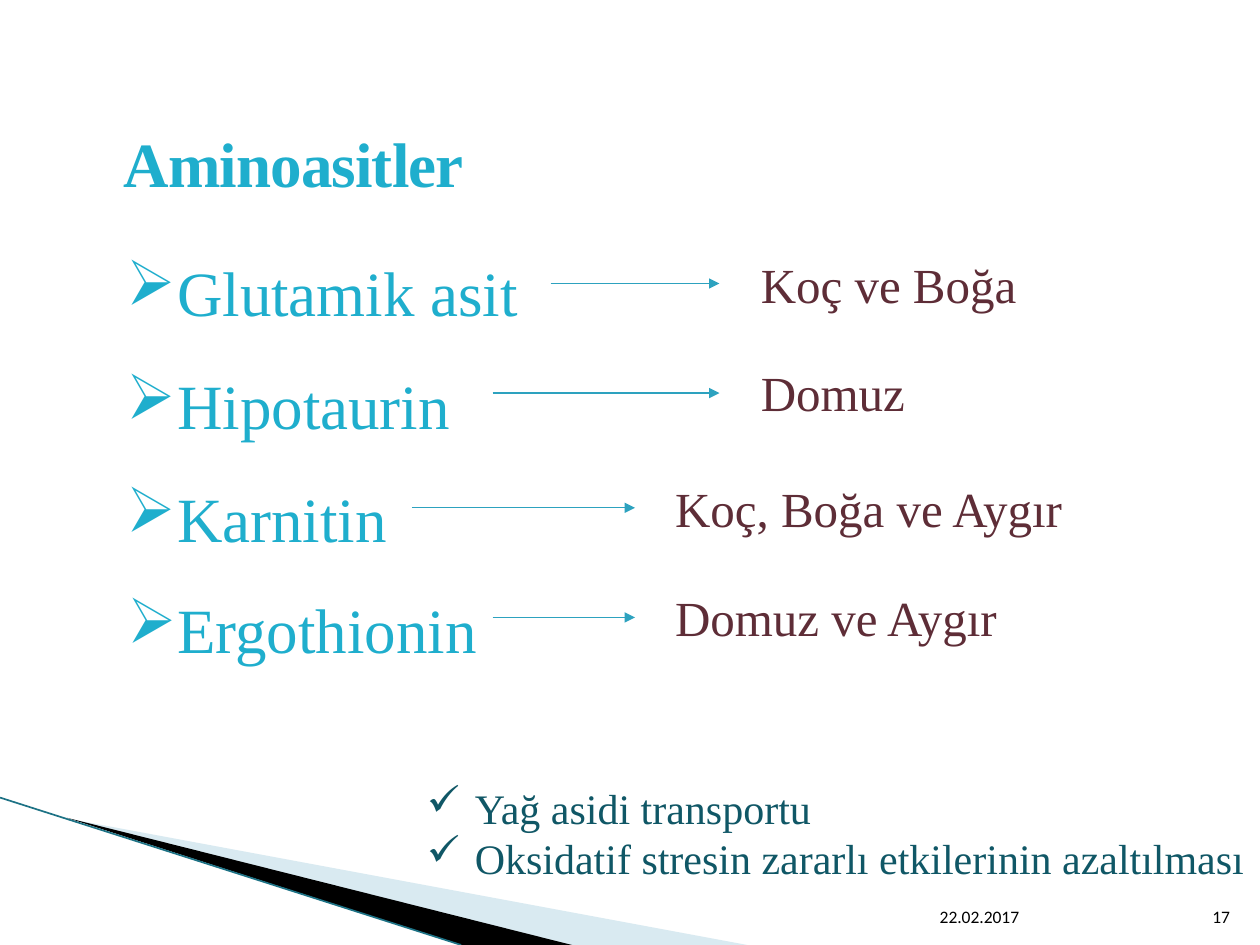
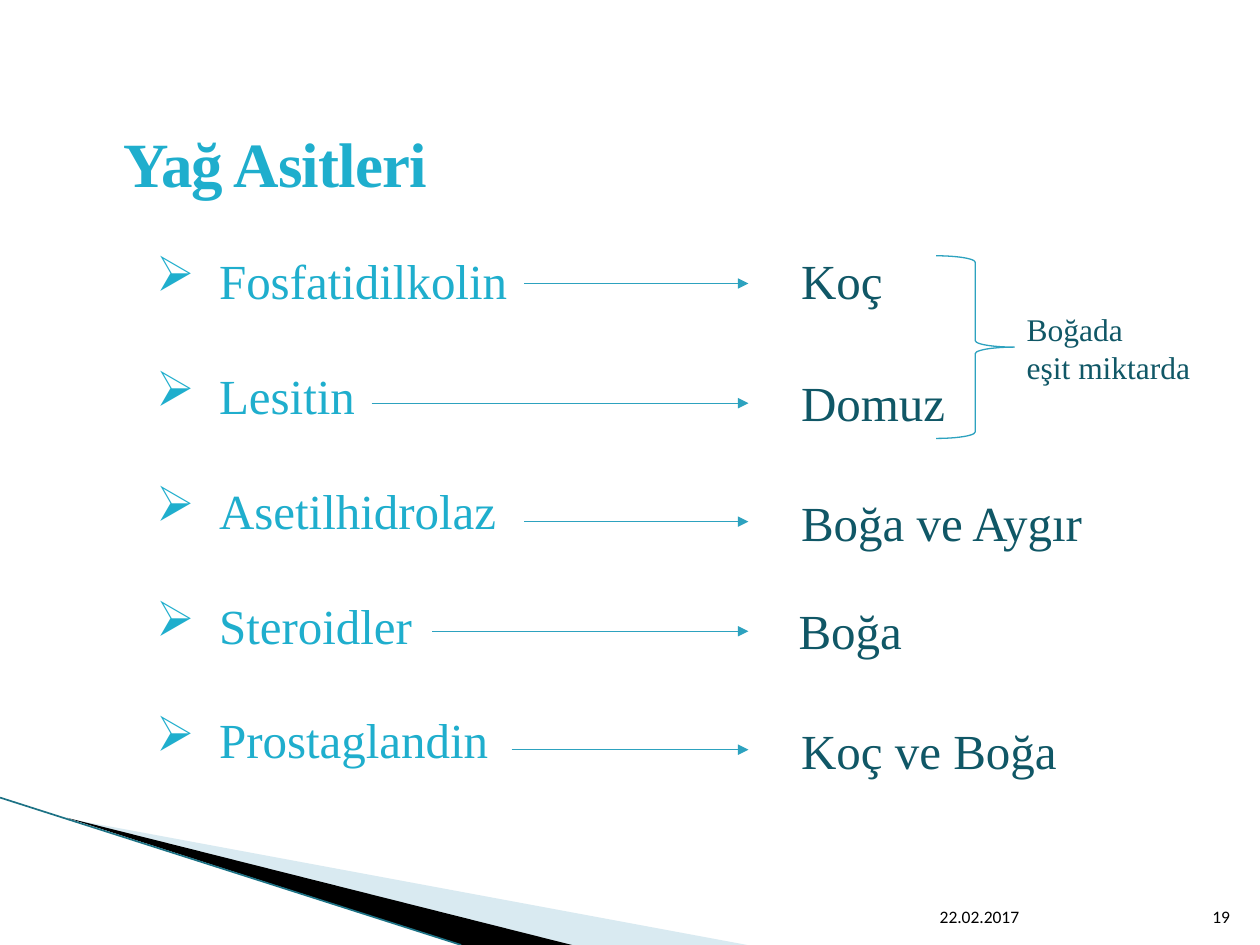
import lxml.etree
import pptx
import pptx.dml.color
import pptx.enum.shapes
import pptx.enum.text
import pptx.oxml.ns
import pptx.util

Inches = pptx.util.Inches
Pt = pptx.util.Pt
qn = pptx.oxml.ns.qn
ANCHOR = pptx.enum.text.MSO_ANCHOR
ALIGN = pptx.enum.text.PP_ALIGN


def rgb(value):
    return pptx.dml.color.RGBColor.from_string(value)


class Deck:
    """Holds the shared style and the slide being built."""

    SERIF = "Times New Roman"
    SANS = "Calibri"
    SKY = "1FAECD"
    TEAL = "2DA2BF"
    DEEP = "105766"
    PLUM = "5E2D37"
    BLACK = "000000"
    PALE = "A0CBDC"
    EDGE = "1D7285"

    def __init__(self):
        self.prs = pptx.Presentation()
        self.prs.slide_width = Inches(10)
        self.prs.slide_height = Inches(7.5)
        self.slide = None

    def start(self, title, number):
        self.slide = self.prs.slides.add_slide(self.prs.slide_layouts[6])
        self.wedge([(0.55, 6.5), (5.93, 7.5), (4.53, 7.5)], self.PALE, 40)
        self.wedge([(0.53, 6.49), (4.54, 7.5), (3.66, 7.5)], self.BLACK)
        self.line((0, 6.33), (3.66, 7.5), self.EDGE, 0.95)
        footer = dict(size=10, color=self.BLACK, font=self.SANS,
                      wrap=True, anchor=ANCHOR.BOTTOM)
        self.text(["22.02.2017"], (7.36, 7.01, 2.1, 0.4), **footer)
        self.text([number], (9.46, 7.01, 0.4, 0.4), align=ALIGN.RIGHT, **footer)
        heading = self.text([title], (0.91, 0.44, 9.09, 1.19), 36, self.SKY,
                            wrap=True, anchor=ANCHOR.BOTTOM, spacing=0.85)
        heading.margin_left = heading.margin_right = Inches(0.07)
        heading.margin_top = heading.margin_bottom = Inches(0.04)
        run = heading.paragraphs[0].runs[0]
        run.font.bold = True
        run.font._element.set("spc", "-50")

    def wedge(self, points, color, opacity=100):
        corners = [(Inches(x), Inches(y)) for x, y in points]
        builder = self.slide.shapes.build_freeform(*corners[0])
        builder.add_line_segments(corners[1:], close=True)
        shape = builder.convert_to_shape()
        shape.shadow.inherit = False
        shape.fill.solid()
        shape.fill.fore_color.rgb = rgb(color)
        shape.line.fill.background()
        if opacity < 100:
            tint = shape._element.spPr.find(".//" + qn("a:srgbClr"))
            alpha = lxml.etree.SubElement(tint, qn("a:alpha"))
            alpha.set("val", str(opacity * 1000))

    def line(self, begin, end, color, width):
        connector = self.slide.shapes.add_connector(
            pptx.enum.shapes.MSO_CONNECTOR.STRAIGHT,
            *(Inches(v) for v in begin + end))
        connector.line.color.rgb = rgb(color)
        connector.line.width = Pt(width)
        lxml.etree.SubElement(connector._element.spPr, qn("a:effectLst"))
        return connector

    def arrow(self, left, right, y):
        connector = self.line((left, y), (right, y), self.TEAL, 0.75)
        outline = connector.line._get_or_add_ln()
        lxml.etree.SubElement(outline, qn("a:tailEnd")).set("type", "triangle")

    def brace(self, left, top, width, height):
        shape = self.slide.shapes.add_shape(
            pptx.enum.shapes.MSO_SHAPE.RIGHT_BRACE,
            Inches(left), Inches(top), Inches(width), Inches(height))
        shape.shadow.inherit = False
        shape.fill.background()
        shape.line.color.rgb = rgb(self.TEAL)
        shape.line.width = Pt(0.75)

    def text(self, lines, box, size, color, font=SERIF, wrap=False,
             anchor=ANCHOR.TOP, align=ALIGN.LEFT, spacing=None,
             gap=0, bullet=None, indent=0.38):
        frame = self.slide.shapes.add_textbox(
            *(Inches(v) for v in box)).text_frame
        frame.word_wrap = wrap
        frame.vertical_anchor = anchor
        frame.text = "\n".join(lines)
        for index, paragraph in enumerate(frame.paragraphs):
            if bullet:
                props = paragraph._p.get_or_add_pPr()
                props.set("marL", str(Inches(indent)))
                props.set("indent", str(-Inches(indent)))
                lxml.etree.SubElement(props, qn("a:buChar")).set("char", bullet)
            paragraph.alignment = align
            if spacing:
                paragraph.line_spacing = spacing
            if gap and index:
                paragraph.space_before = Pt(gap)
            for run in paragraph.runs:
                run.font.name = font
                run.font.size = Pt(size)
                run.font.color.rgb = rgb(color)
        return frame

    def sources(self, rows, color):
        for begin, end, y, animal, left, top, width in rows:
            self.arrow(begin, end, y)
            self.text([animal], (left, top, width, 0.57), 28, color)


def amino_acids(deck):
    deck.start("Aminoasitler", "17")
    acids = dict(size=36, color=deck.SKY, spacing=1.5, bullet="➢")
    deck.text(["Glutamik asit", "Hipotaurin", "Karnitin"],
              (0.91, 1.66, 7.87, 2.72), wrap=True, **acids)
    deck.text(["Ergothionin"], (0.91, 4.34, 3.01, 1.01), **acids)
    deck.sources([
        (4.37, 5.71, 2.25, "Koç ve Boğa", 5.94, 1.97, 2.25),
        (3.91, 5.71, 3.12, "Domuz", 5.94, 2.83, 1.36),
        (3.27, 5.04, 4.03, "Koç, Boğa ve Aygır", 5.26, 3.75, 3.31),
        (3.91, 5.04, 4.9, "Domuz ve Aygır", 5.26, 4.61, 2.78),
    ], deck.PLUM)
    deck.text(["Yağ asidi transportu",
               "Oksidatif stresin zararlı etkilerinin azaltılması"],
              (3.29, 6.16, 6.74, 0.91), 24, deck.DEEP, bullet="✓")


def fatty_acids(deck):
    deck.start("Yağ Asitleri", "19")
    deck.text(["Fosfatidilkolin", "Lesitin", "Asetilhidrolaz",
               "Steroidler", "Prostaglandin"],
              (1.14, 1.94, 3.02, 4.34), 28, deck.SKY,
              gap=32, bullet="➢", indent=0.5)
    deck.sources([
        (4.16, 5.94, 2.25, "Koç", 6.26, 1.94, 0.86),
        (2.95, 5.94, 3.2, "Domuz", 6.26, 2.91, 1.36),
        (4.16, 5.94, 4.14, "Boğa ve Aygır", 6.26, 3.86, 2.45),
        (3.43, 5.94, 5.01, "Boğa", 6.24, 4.72, 1.03),
        (4.06, 5.94, 5.95, "Koç ve Boğa", 6.26, 5.67, 2.25),
    ], deck.DEEP)
    deck.brace(7.43, 2.03, 0.62, 1.45)
    deck.text(["Boğada", "eşit miktarda"], (8.05, 2.41, 1.51, 0.71),
              18, deck.DEEP)


def main():
    deck = Deck()
    amino_acids(deck)
    fatty_acids(deck)
    deck.prs.save("out.pptx")


if __name__ == "__main__":
    main()
